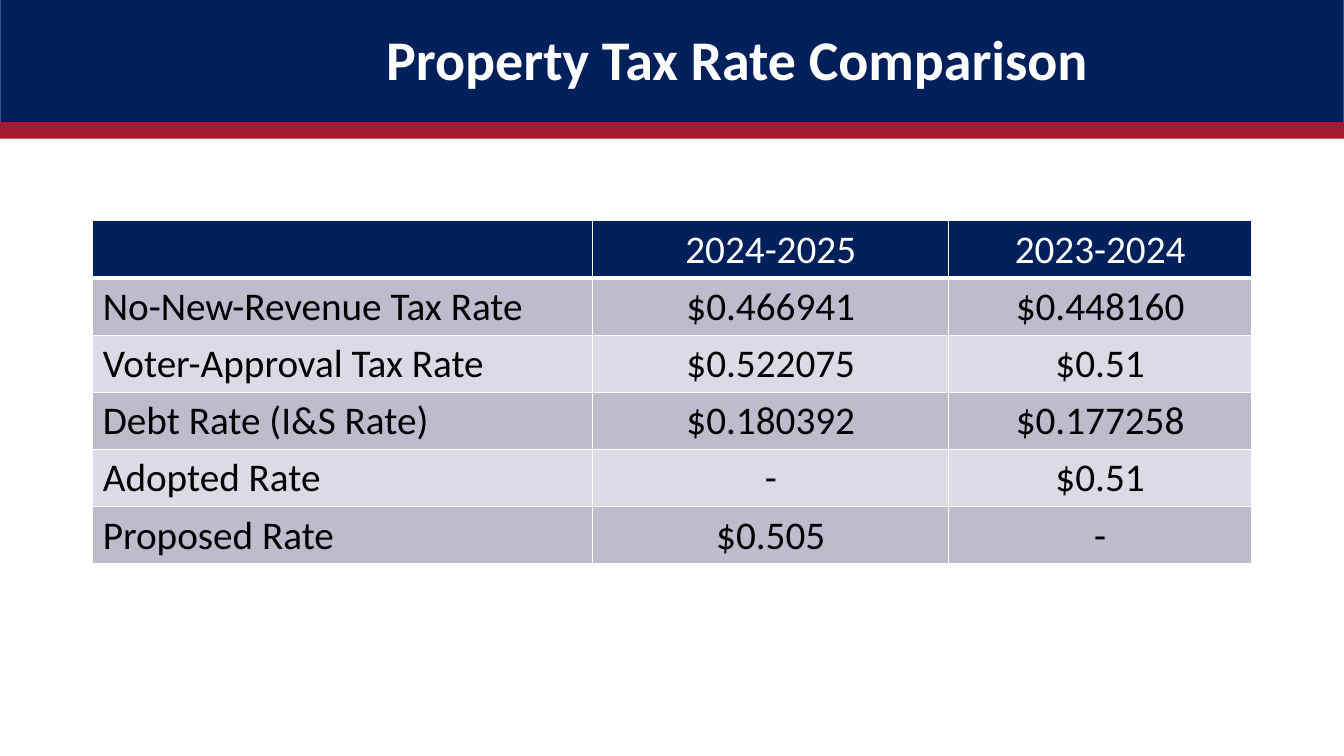
from dataclasses import dataclass

from lxml import etree
from pptx import Presentation
from pptx.dml.color import RGBColor
from pptx.enum import shapes, text
from pptx.oxml import ns
from pptx.util import Pt


@dataclass(frozen=True)
class Theme:
    font: str = "Calibri"
    navy: str = "00205B"
    navy_edge: str = "325491"
    red: str = "A6192E"
    white: str = "FFFFFF"
    black: str = "000000"
    bands: tuple = ("BDBCCD", "DBDBE5")
    title_size: int = 40
    table_size: int = 28


THEME = Theme()
SLIDE_WIDTH, SLIDE_HEIGHT = 960, 540
COLUMN_WIDTHS = (357, 254.5, 216)
ROW_HEIGHT = 40.8
RATES = (
    ("", "2024-2025", "2023-2024"),
    ("No-New-Revenue Tax Rate", "$0.466941", "$0.448160"),
    ("Voter-Approval Tax Rate", "$0.522075", "$0.51"),
    ("Debt Rate (I&S Rate)", "$0.180392", "$0.177258"),
    ("Adopted Rate", "-", "$0.51"),
    ("Proposed Rate", "$0.505", "-"),
)


def rgb(value):
    return RGBColor.from_string(value)


def add_band(slide, top, height, color, edge=None):
    """Draw a full-width bar across the slide."""
    band = slide.shapes.add_shape(
        shapes.MSO_SHAPE.RECTANGLE, 0, Pt(top), Pt(SLIDE_WIDTH), Pt(height))
    band.shadow.inherit = False
    band.fill.solid()
    band.fill.fore_color.rgb = rgb(color)
    if edge:
        band.line.color.rgb = rgb(edge)
        band.line.width = Pt(1)
    else:
        band.line.fill.background()


def add_run(paragraph, words, size, color, bold=False):
    run = paragraph.add_run()
    run.text = words
    run.font.name = THEME.font
    run.font.size = Pt(size)
    run.font.bold = bold
    run.font.color.rgb = rgb(color)


def add_title(slide, words):
    title = slide.shapes.add_textbox(Pt(268.8), Pt(13.7), Pt(521.3), Pt(55.7))
    frame = title.text_frame
    frame.word_wrap = False
    frame.auto_size = text.MSO_AUTO_SIZE.SHAPE_TO_FIT_TEXT
    add_run(frame.paragraphs[0], words, THEME.title_size, THEME.white, bold=True)


def set_borders(cell, top, bottom):
    """Give a cell white borders; top and bottom are widths in points."""
    properties = cell._tc.get_or_add_tcPr()
    for side, width in (("L", 1), ("R", 1), ("T", top), ("B", bottom)):
        border = etree.SubElement(properties, ns.qn(f"a:ln{side}"), w=str(Pt(width)))
        fill = etree.SubElement(border, ns.qn("a:solidFill"))
        etree.SubElement(fill, ns.qn("a:srgbClr"), val=THEME.white)


def fill_cell(cell, words, row, column):
    is_header = row == 0
    set_borders(cell, top=3 if row == 1 else 1, bottom=3 if is_header else 1)
    cell.fill.solid()
    cell.fill.fore_color.rgb = rgb(
        THEME.navy if is_header else THEME.bands[(row - 1) % 2])
    paragraph = cell.text_frame.paragraphs[0]
    if column:
        paragraph.alignment = text.PP_ALIGN.CENTER
    if words:
        color = THEME.white if is_header else THEME.black
        add_run(paragraph, words, THEME.table_size, color)


def add_rate_table(slide):
    frame = slide.shapes.add_table(
        len(RATES), len(COLUMN_WIDTHS), Pt(66.3), Pt(157.7),
        Pt(sum(COLUMN_WIDTHS)), Pt(ROW_HEIGHT * len(RATES)))
    table = frame.table
    table.first_row = False
    table.horz_banding = False
    for column, width in zip(table.columns, COLUMN_WIDTHS):
        column.width = Pt(width)
    for row, entries in enumerate(RATES):
        table.rows[row].height = Pt(ROW_HEIGHT)
        for column, words in enumerate(entries):
            fill_cell(table.cell(row, column), words, row, column)


def main():
    deck = Presentation()
    deck.slide_width, deck.slide_height = Pt(SLIDE_WIDTH), Pt(SLIDE_HEIGHT)
    slide = deck.slides.add_slide(deck.slide_layouts[6])
    add_band(slide, -0.7, 88.5, THEME.navy, THEME.navy_edge)
    add_band(slide, 87.3, 11.8, THEME.red)
    add_title(slide, "Property Tax Rate Comparison")
    add_rate_table(slide)
    deck.save("out.pptx")


if __name__ == "__main__":
    main()
